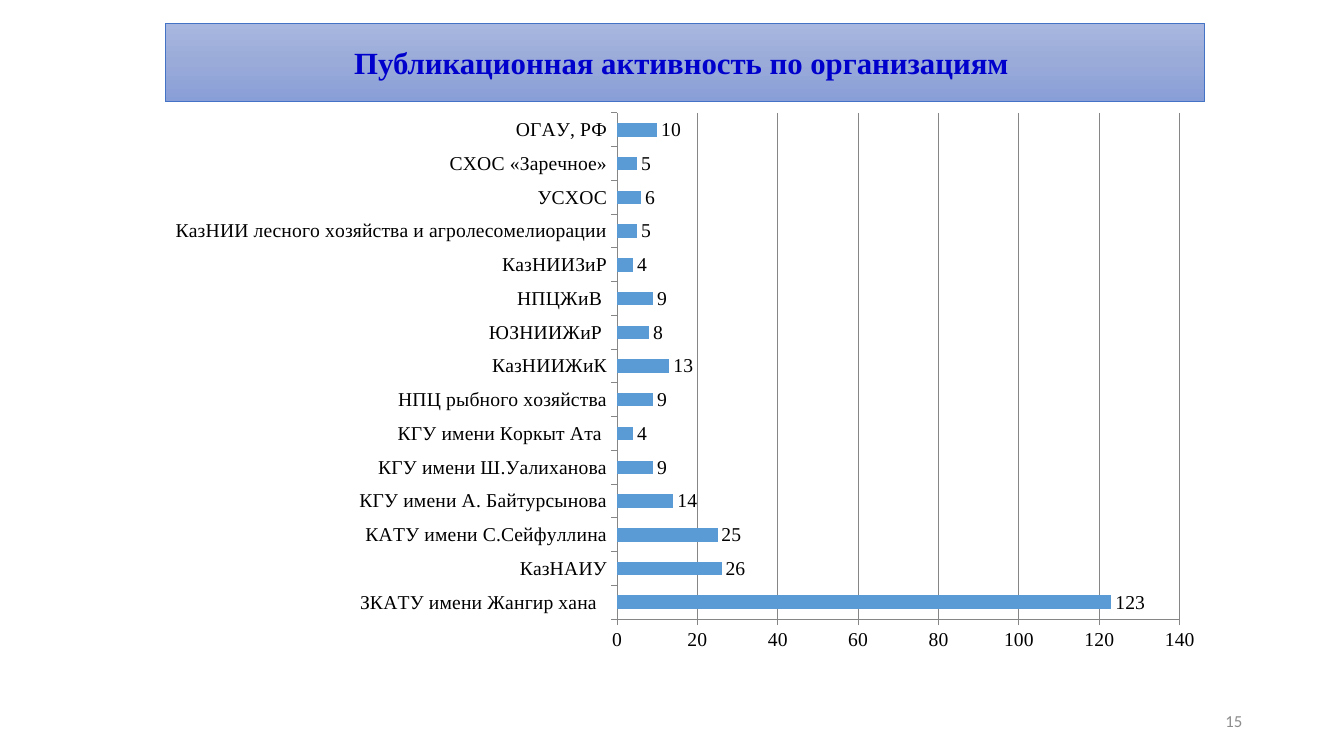
from copy import deepcopy
from dataclasses import dataclass

from pptx import Presentation
from pptx import util as u
from pptx.chart.data import CategoryChartData
from pptx.dml.color import RGBColor
from pptx.enum import chart as ch, shapes, text

# Content
TITLE = "Публикационная активность по организациям "
PAGE = "15"
PUBLICATIONS = [
    ("ЗКАТУ имени Жангир хана  ", 123),
    ("КазНАИУ", 26),
    ("КАТУ имени С.Сейфуллина", 25),
    ("КГУ имени А. Байтурсынова", 14),
    ("КГУ имени Ш.Уалиханова", 9),
    ("КГУ имени Коркыт Ата ", 4),
    ("НПЦ рыбного хозяйства", 9),
    ("КазНИИЖиК", 13),
    ("ЮЗНИИЖиР ", 8),
    ("НПЦЖиВ ", 9),
    ("КазНИИЗиР", 4),
    ("КазНИИ лесного хозяйства и агролесомелиорации", 5),
    ("УСХОС", 6),
    ("СХОС «Заречное»", 5),
    ("ОГАУ, РФ", 10),
]


@dataclass(frozen=True)
class Theme:
    serif: str = "Times New Roman"
    sans: str = "Calibri"
    title_size: int = 22
    chart_size: int = 14
    page_size: int = 12
    title: str = "0000CC"
    ink: str = "000000"
    page: str = "8C8C8C"
    bar: str = "5B9BD5"
    axis: str = "868686"
    band_line: str = "4472C4"
    band: tuple = ("A8B7DF", "9AABD9", "889ED7")


T = Theme()

# Places in inches: left, top, width, height
BAND = (1.64, 0.23, 10.31, 0.78)
HEADING = (2.11, 0.38, 9.37, 0.47)
CHART = (1.54, 1.01, 10.53, 5.58)
NUMBER = (9.42, 6.95, 3, 0.4)
PLOT = {"x": 0.435, "y": 0.02, "w": 0.53, "h": 0.9}  # shares of the chart


def box(place):
    return [u.Inches(v) for v in place]


def rgb(value):
    return RGBColor.from_string(value)


def style(font, name, size, color, bold=False):
    font.name, font.size, font.bold = name, u.Pt(size), bold
    font.color.rgb = rgb(color)


def write(sp, words, align):
    tf = sp.text_frame
    tf.word_wrap = True
    tf.auto_size = text.MSO_AUTO_SIZE.NONE
    tf.vertical_anchor = text.MSO_ANCHOR.MIDDLE
    p = tf.paragraphs[0]
    p.text, p.alignment = words, align
    return p.font


prs = Presentation()
prs.slide_width, prs.slide_height = u.Inches(13.33), u.Inches(7.5)
s = prs.slides.add_slide(prs.slide_layouts[5])

# Gradient band, placed behind the title
band = s.shapes.add_shape(shapes.MSO_SHAPE.RECTANGLE, *box(BAND))
band.shadow.inherit = False
band.line.color.rgb = rgb(T.band_line)
band.line.width = u.Pt(0.5)
band.fill.gradient()
band.fill.gradient_angle = 270
first = band.fill.gradient_stops[0]._gs
first.addnext(deepcopy(first))
for i, (stop, color) in enumerate(zip(band.fill.gradient_stops, T.band)):
    stop.position, stop.color.rgb = i / 2, rgb(color)
s.shapes._spTree.insert(2, band._element)

# Title
title = s.shapes.title
title.left, title.top, title.width, title.height = box(HEADING)
style(write(title, TITLE, text.PP_ALIGN.CENTER),
      T.serif, T.title_size, T.title, True)

# Page number
number = s.shapes.add_textbox(*box(NUMBER))
style(write(number, PAGE, text.PP_ALIGN.RIGHT), T.sans, T.page_size, T.page)

# Bar chart
data = CategoryChartData()
data.categories = [name for name, _ in PUBLICATIONS]
data.add_series("Публикации", [count for _, count in PUBLICATIONS])
chart = s.shapes.add_chart(
    ch.XL_CHART_TYPE.BAR_CLUSTERED, *box(CHART), data).chart
chart.has_legend = chart.has_title = False
style(chart.font, T.serif, T.chart_size, T.ink)

plot = chart.plots[0]
plot.gap_width, plot.vary_by_categories = 150, False
fill = plot.series[0].format.fill
fill.solid()
fill.fore_color.rgb = rgb(T.bar)
plot.has_data_labels = True
labels = plot.data_labels
labels.show_value = True
labels.position = ch.XL_LABEL_POSITION.OUTSIDE_END
style(labels.font, T.serif, T.chart_size, T.ink)

# Axes and gridlines
values, names = chart.value_axis, chart.category_axis
values.minimum_scale, values.maximum_scale, values.major_unit = 0, 140, 20
values.has_major_gridlines = True
for axis in (values, names):
    axis.major_tick_mark = ch.XL_TICK_MARK.OUTSIDE
    axis.minor_tick_mark = ch.XL_TICK_MARK.NONE
for part in (values, names, values.major_gridlines):
    part.format.line.color.rgb = rgb(T.axis)
    part.format.line.width = u.Pt(0.75)

# Fixed inner plot area, so long names keep one line
area = chart._chartSpace.chart.plotArea
layout = area.find("{*}layout")
if layout is None:
    layout = area.makeelement(area.tag.replace("plotArea", "layout"))
    area.insert(0, layout)
manual = layout.makeelement(area.tag.replace("plotArea", "manualLayout"))
layout.append(manual)
settings = {"layoutTarget": "inner", "xMode": "edge", "yMode": "edge", **PLOT}
for key, value in settings.items():
    manual.append(manual.makeelement(
        area.tag.replace("plotArea", key), {"val": str(value)}))

prs.save("out.pptx")
